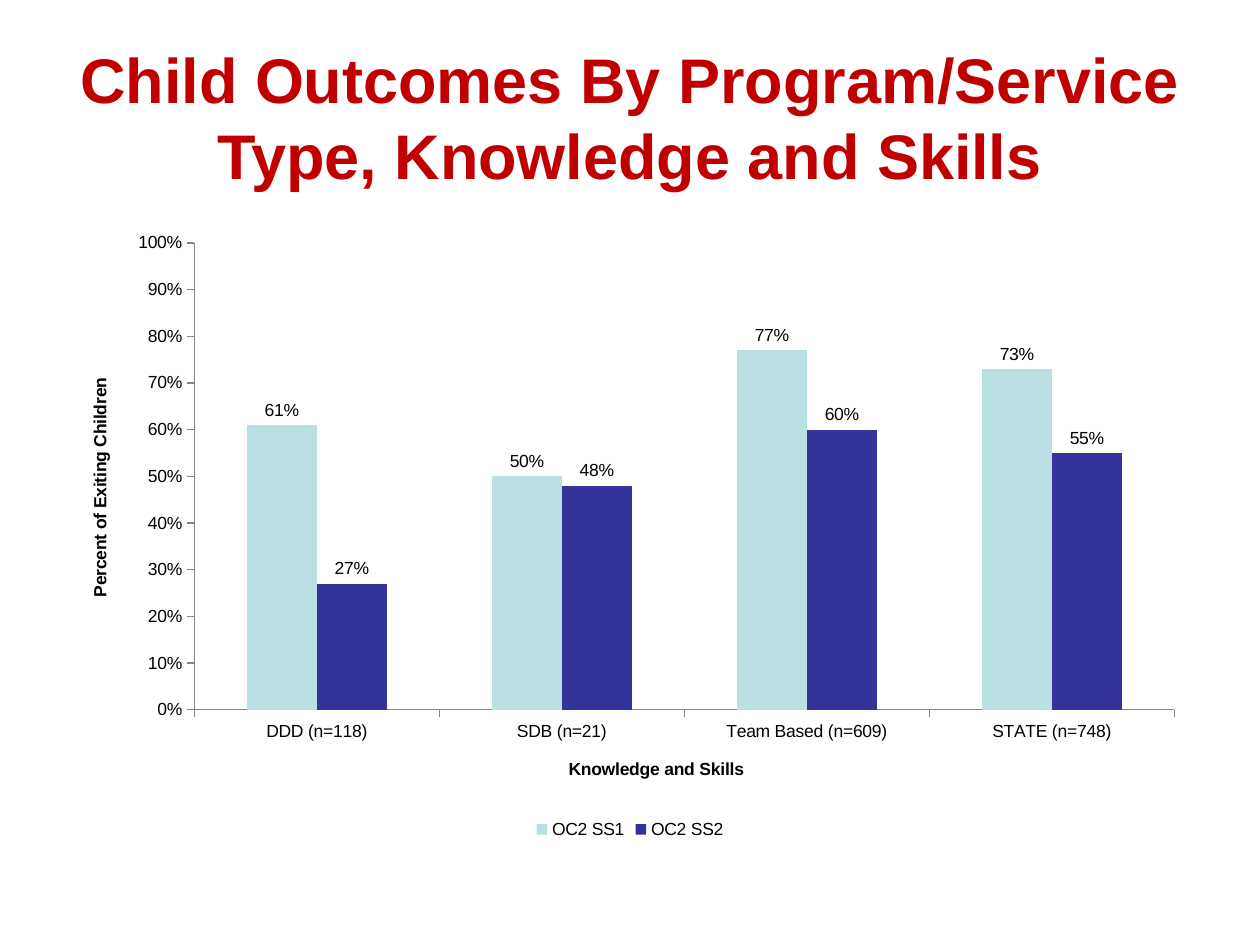
from pptx import Presentation
from pptx.chart.data import CategoryChartData
from pptx.dml.color import RGBColor
from pptx.enum.chart import XL_CHART_TYPE, XL_LABEL_POSITION, XL_LEGEND_POSITION, XL_TICK_MARK
from pptx.enum.text import MSO_ANCHOR, PP_ALIGN
from pptx.util import Cm, Pt

FONT = "Arial"
COLORS = {
    "title": "C00000",
    "text": "000000",
    "axis": "868686",
    "OC2 SS1": "BBE0E3",
    "OC2 SS2": "333399",
}
CATEGORIES = ["DDD (n=118)", "SDB (n=21)", "Team Based (n=609)", "STATE (n=748)"]
OUTCOMES = {
    "OC2 SS1": [0.61, 0.50, 0.77, 0.73],
    "OC2 SS2": [0.27, 0.48, 0.60, 0.55],
}


def color(name):
    """Return the named colour."""
    return RGBColor.from_string(COLORS[name])


def style_font(font, size, color_name, bold):
    """Set the typeface, size, colour and weight of a font."""
    font.name = FONT
    font.size = Pt(size)
    font.bold = bold
    font.color.rgb = color(color_name)


def add_title(slide, text):
    """Add the centred slide title."""
    shape = slide.shapes.add_textbox(Cm(1.27), Cm(0.76), Cm(22.86), Cm(3.18))
    frame = shape.text_frame
    frame.word_wrap = True
    frame.vertical_anchor = MSO_ANCHOR.MIDDLE
    paragraph = frame.paragraphs[0]
    paragraph.text = text
    paragraph.alignment = PP_ALIGN.CENTER
    style_font(paragraph.font, 36, "title", True)


def style_axis(axis, title):
    """Give an axis its title, line and outward ticks."""
    axis.has_major_gridlines = False
    axis.major_tick_mark = XL_TICK_MARK.OUTSIDE
    axis.minor_tick_mark = XL_TICK_MARK.NONE
    axis.format.line.color.rgb = color("axis")
    axis.format.line.width = Pt(0.75)
    style_font(axis.tick_labels.font, 10, "text", False)
    frame = axis.axis_title.text_frame
    frame.text = title
    style_font(frame.paragraphs[0].font, 10, "text", True)


def style_series(series):
    """Colour a series and label its columns with percentages."""
    series.format.fill.solid()
    series.format.fill.fore_color.rgb = color(series.name)
    labels = series.data_labels
    labels.show_value = True
    labels.number_format = "0%"
    labels.number_format_is_linked = False
    labels.position = XL_LABEL_POSITION.OUTSIDE_END
    style_font(labels.font, 10, "text", False)


def add_outcome_chart(slide):
    """Add the clustered column chart of child outcomes."""
    data = CategoryChartData(number_format="0%")
    data.categories = CATEGORIES
    for name, values in OUTCOMES.items():
        data.add_series(name, values)
    chart = slide.shapes.add_chart(
        XL_CHART_TYPE.COLUMN_CLUSTERED, Cm(1.27), Cm(4.45), Cm(22.86), Cm(12.57), data
    ).chart
    style_font(chart.font, 10, "text", False)
    chart.has_title = False
    chart.has_legend = True
    chart.legend.position = XL_LEGEND_POSITION.BOTTOM
    chart.legend.include_in_layout = False

    plot = chart.plots[0]
    plot.gap_width = 150
    plot.overlap = 0
    plot.vary_by_categories = False
    for series in plot.series:
        style_series(series)

    style_axis(chart.category_axis, "Knowledge and Skills")
    value_axis = chart.value_axis
    style_axis(value_axis, "Percent of Exiting Children")
    value_axis.minimum_scale = 0
    value_axis.maximum_scale = 1
    value_axis.major_unit = 0.1
    value_axis.tick_labels.number_format = "0%"
    value_axis.tick_labels.number_format_is_linked = False


def main():
    """Build and save the presentation."""
    presentation = Presentation()
    presentation.slide_width = Cm(25.4)
    presentation.slide_height = Cm(19.05)
    slide = presentation.slides.add_slide(presentation.slide_layouts[6])
    add_title(slide, "Child Outcomes By Program/Service Type, Knowledge and Skills")
    add_outcome_chart(slide)
    presentation.save("out.pptx")


if __name__ == "__main__":
    main()
